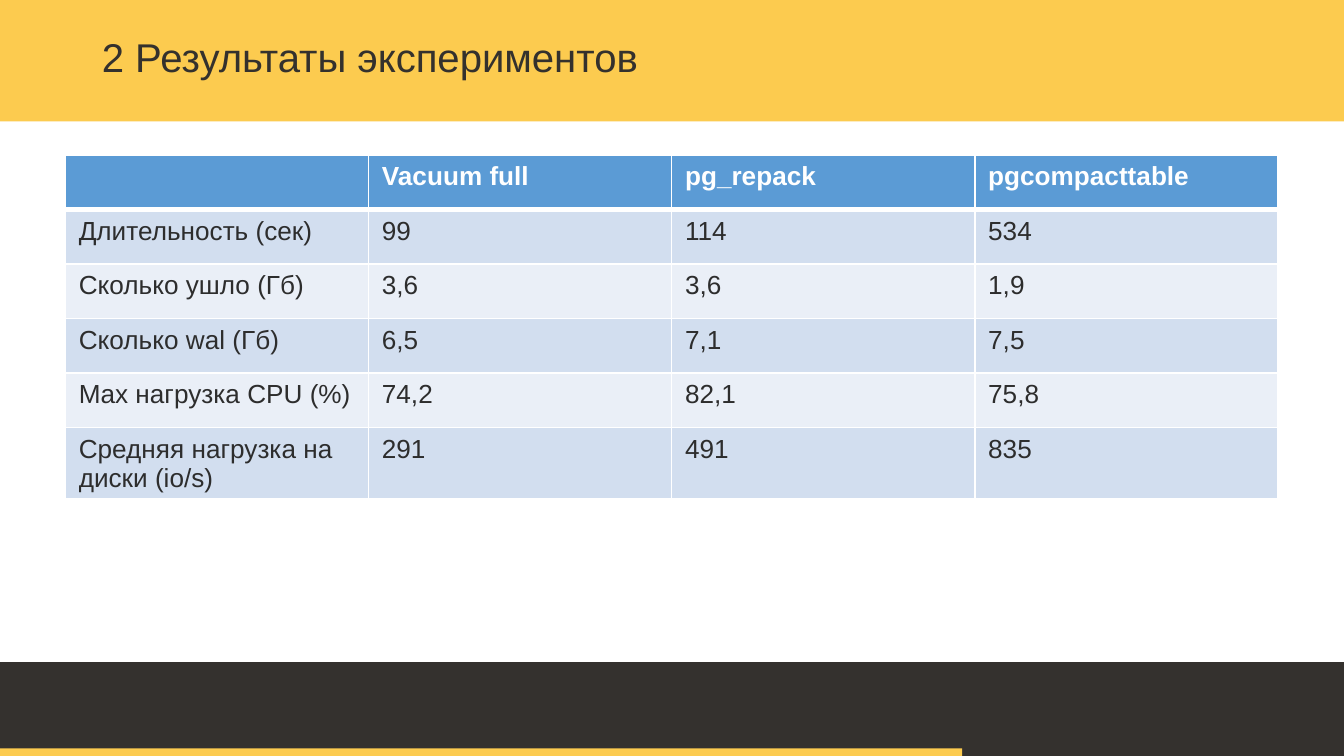
import pptx
import pptx.util
import pptx.dml.color
import pptx.enum.shapes
import pptx.enum.text
import pptx.oxml
import pptx.oxml.ns

Pt = pptx.util.Pt
RGBColor = pptx.dml.color.RGBColor

COLORS = {
    "yellow": "FCCB4F",
    "dark": "34312E",
    "title": "34312D",
    "header": "5B9BD5",
    "odd_row": "D2DEEF",
    "even_row": "EAEFF7",
    "text": "2D2D2D",
    "white": "FFFFFF",
}

ROWS = [
    ["", "Vacuum full", "pg_repack", "pgcompacttable"],
    ["Длительность (сек)", "99", "114", "534"],
    ["Сколько ушло (Гб)", "3,6", "3,6", "1,9"],
    ["Сколько wal (Гб)", "6,5", "7,1", "7,5"],
    ["Max нагрузка CPU (%)", "74,2", "82,1", "75,8"],
    ["Средняя нагрузка на диски (io/s)", "291", "491", "835"],
]


def format_text(paragraph, size, color, bold=False):
    for run in paragraph.runs:
        run.font.name = "Arial"
        run.font.size = Pt(size)
        run.font.bold = bold
        run.font.color.rgb = RGBColor.from_string(COLORS[color])


def add_border(cell, side, width):
    properties = cell._tc.get_or_add_tcPr()
    line = pptx.oxml.parse_xml(
        f'<a:{side} {pptx.oxml.ns.nsdecls("a")} w="{Pt(width)}">'
        f'<a:solidFill><a:srgbClr val="{COLORS["white"]}"/></a:solidFill></a:{side}>'
    )
    properties.append(line)


presentation = pptx.Presentation()
presentation.slide_width = Pt(720)
presentation.slide_height = Pt(405)
slide = presentation.slides.add_slide(presentation.slide_layouts[6])

bands = [
    (354.7, 720, 50.3, "dark"),
    (0, 720, 65, "yellow"),
    (401, 515.5, 4, "yellow"),
]
for top, width, height, color in bands:
    band = slide.shapes.add_shape(
        pptx.enum.shapes.MSO_SHAPE.RECTANGLE, Pt(0), Pt(top), Pt(width), Pt(height)
    )
    band.shadow.inherit = False
    band.fill.solid()
    band.fill.fore_color.rgb = RGBColor.from_string(COLORS[color])
    band.line.fill.background()

title = slide.shapes.add_textbox(Pt(47.5), Pt(0), Pt(633.6), Pt(63.4))
title.text_frame.word_wrap = True
title.text_frame.vertical_anchor = pptx.enum.text.MSO_ANCHOR.MIDDLE
title.text_frame.text = "2 Результаты экспериментов"
paragraph = title.text_frame.paragraphs[0]
paragraph.line_spacing = 0.9
format_text(paragraph, 21.5, "title")

row_height = 29.2
column_width = 162.4
table = slide.shapes.add_table(
    len(ROWS), len(ROWS[0]), Pt(35), Pt(83.1),
    Pt(column_width * len(ROWS[0])), Pt(row_height * len(ROWS)),
).table
for column in table.columns:
    column.width = Pt(column_width)
for row_index, values in enumerate(ROWS):
    table.rows[row_index].height = Pt(row_height)
    is_header = row_index == 0
    fill = "header" if is_header else ("even_row", "odd_row")[row_index % 2]
    for column_index, value in enumerate(values):
        cell = table.cell(row_index, column_index)
        cell.margin_bottom = Pt(1)
        if value:
            cell.text_frame.text = value
        format_text(
            cell.text_frame.paragraphs[0], 14, "white" if is_header else "text", is_header
        )
        for side in ("lnL", "lnR", "lnT", "lnB"):
            thick = (side == "lnB" and is_header) or (side == "lnT" and row_index == 1)
            add_border(cell, side, 3 if thick else 1)
        cell.fill.solid()
        cell.fill.fore_color.rgb = RGBColor.from_string(COLORS[fill])

presentation.save("out.pptx")
